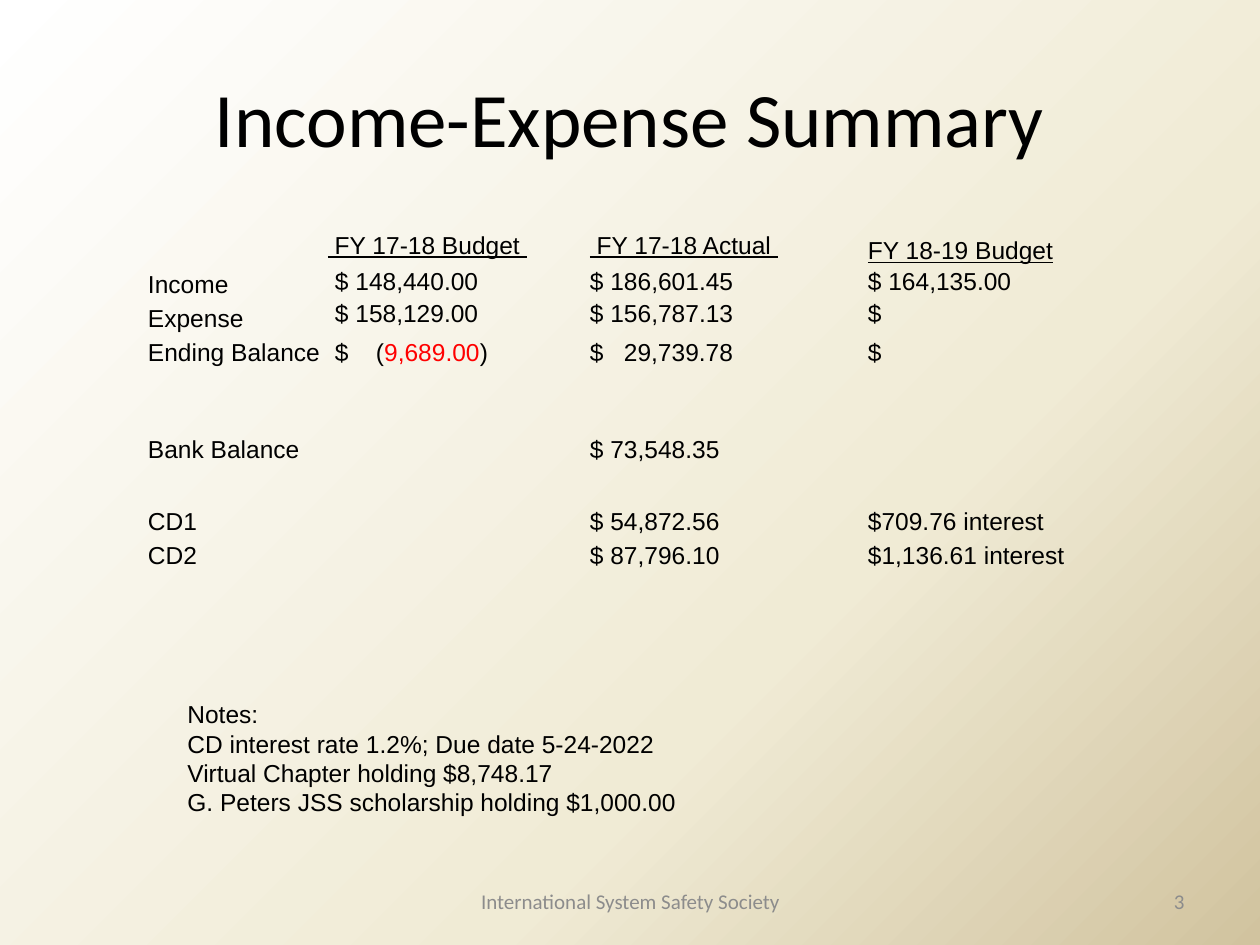
from dataclasses import dataclass
from typing import NamedTuple

from lxml.etree import SubElement
from pptx import Presentation
from pptx.dml.color import RGBColor
from pptx.enum.text import MSO_ANCHOR, PP_ALIGN
from pptx.oxml.ns import qn
from pptx.util import Pt

SCALE = 914400 / 126
BLACK, RED, GREY = "000000", "FF0000", "8C8C8C"
TOP, MID, LOW = MSO_ANCHOR.TOP, MSO_ANCHOR.MIDDLE, MSO_ANCHOR.BOTTOM
PLAIN = "{2D5ABB26-0587-4C30-8999-92F81FD0307C}"  # no style, no grid


class Run(NamedTuple):
    text: str
    color: str = BLACK
    line: bool = False


@dataclass
class Cell:
    row: int
    col: int
    runs: list[Run]
    anchor: MSO_ANCHOR = TOP
    inset: int = 1
    tab: int = 0


@dataclass
class Box:
    rect: tuple[int, int, int, int]
    lines: list[Run]
    size: int
    face: str
    align: PP_ALIGN = PP_ALIGN.LEFT
    anchor: MSO_ANCHOR = MID
    wrap: bool = True


def px(n: float) -> int:
    return round(n * SCALE)


def rgb(code: str) -> RGBColor:
    return RGBColor.from_string(code)


def add_run(para, item: Run, size: int, face: str) -> None:
    run = para.add_run()
    run.text = item.text
    font = run.font
    font.size, font.name, font.underline = Pt(size), face, item.line
    font.color.rgb = rgb(item.color)


def paint_back(slide, stops: list[tuple[int, str]]) -> None:
    fill = slide.background.fill
    fill.gradient()
    grad = slide.background._cSld.find(".//" + qn("a:gradFill"))
    stop_list = grad.find(qn("a:gsLst"))
    for old in list(stop_list):
        stop_list.remove(old)
    for pos, code in stops:
        stop = SubElement(stop_list, qn("a:gs"), pos=str(pos * 1000))
        SubElement(stop, qn("a:srgbClr"), val=code)
    fill.gradient_angle = 315


def add_box(slide, box: Box) -> None:
    frame = slide.shapes.add_textbox(*map(px, box.rect)).text_frame
    frame.word_wrap, frame.vertical_anchor = box.wrap, box.anchor
    for i, item in enumerate(box.lines):
        para = frame.add_paragraph() if i else frame.paragraphs[0]
        para.alignment = box.align
        add_run(para, item, box.size, box.face)


def fill_cell(table, item: Cell) -> None:
    cell = table.cell(item.row, item.col)
    cell.vertical_anchor, cell.margin_left = item.anchor, px(item.inset)
    para = cell.text_frame.paragraphs[0]
    if item.tab:
        tabs = SubElement(para._p.get_or_add_pPr(), qn("a:tabLst"))
        SubElement(tabs, qn("a:tab"), pos=str(px(item.tab)), algn="l")
    for run in item.runs:
        add_run(para, run, 14, "Arial")


def add_grid(slide, left: int, top: int, cols: list[int],
             rows: list[int], cells: list[Cell]) -> None:
    shape = slide.shapes.add_table(len(rows), len(cols), px(left), px(top),
                                   px(sum(cols)), px(sum(rows)))
    table = shape.table
    table.first_row = table.horz_banding = False
    table._tbl.tblPr.find(qn("a:tableStyleId")).text = PLAIN
    for col, width in zip(table.columns, cols):
        col.width = px(width)
    for row, height in zip(table.rows, rows):
        row.height = px(height)
    for cell in table.iter_cells():
        cell.fill.background()
        cell.margin_left = cell.margin_right = cell.margin_top = px(1)
        cell.margin_bottom = 0
    for item in cells:
        fill_cell(table, item)
    # Empty cells keep the small text height
    for cell in table.iter_cells():
        if not cell.text:
            para = cell.text_frame.paragraphs[0]._p
            SubElement(para, qn("a:endParaRPr"), sz="1400")


def words(row: int, texts: dict[int, str], anchor: MSO_ANCHOR) -> list[Cell]:
    return [Cell(row, col, [Run(text)], anchor, 8 if col == 1 else 1)
            for col, text in texts.items()]


COLS = [180, 262, 278, 237]
ROWS = [34] * 6 + [67] + [34] * 3
CELLS = [
    # Heads
    Cell(0, 1, [Run(" FY 17-18 Budget ", line=True)]),
    Cell(0, 2, [Run(" FY 17-18 Actual ", line=True)]),
    Cell(0, 3, [Run("FY 18-19 Budget", line=True)], LOW),
    # Income, expense and balance
    *words(1, {0: "Income"}, LOW),
    *words(1, {1: "$ 148,440.00", 2: "$ 186,601.45", 3: "$ 164,135.00"}, MID),
    *words(2, {0: "Expense"}, LOW),
    *words(2, {1: "$ 158,129.00", 2: "$ 156,787.13", 3: "$"}, TOP),
    *words(3, {0: "Ending Balance", 3: "$"}, LOW),
    Cell(3, 1, [Run("$\t("), Run("9,689.00", RED), Run(")")], LOW, 8, 41),
    Cell(3, 2, [Run("$\t29,739.78")], LOW, 1, 34),
    # Bank and deposits
    *words(6, {0: "Bank Balance", 2: "$ 73,548.35"}, TOP),
    *words(7, {0: "CD1", 2: "$ 54,872.56", 3: "$709.76 interest"}, LOW),
    *words(8, {0: "CD2", 2: "$ 87,796.10", 3: "$1,136.61 interest"}, LOW),
]
NOTES = [
    "Notes:",
    "CD interest rate 1.2%; Due date 5-24-2022",
    "Virtual Chapter holding $8,748.17",
    "G. Peters JSS scholarship holding $1,000.00",
]
BOXES = [
    # Title
    Box((63, 38, 1134, 158), [Run("Income-Expense Summary")], 44, "Calibri",
        PP_ALIGN.CENTER),
    # Footer and page number
    Box((431, 876, 399, 50), [Run("International System Safety Society", GREY)],
        12, "Calibri", PP_ALIGN.CENTER),
    Box((903, 876, 294, 50), [Run("3", GREY)], 12, "Calibri", PP_ALIGN.RIGHT),
    # Notes
    Box((175, 693, 517, 131), [Run(text) for text in NOTES], 14, "Arial",
        anchor=TOP, wrap=False),
]


def main() -> None:
    deck = Presentation()
    deck.slide_width, deck.slide_height = px(1260), px(945)
    slide = deck.slides.add_slide(deck.slide_layouts[6])
    paint_back(slide, [(0, "FFFFFF"), (65, "F0EBD5"), (100, "D1C39F")])
    for box in BOXES:
        add_box(slide, box)
    add_grid(slide, 147, 231, COLS, ROWS, CELLS)
    deck.save("out.pptx")


if __name__ == "__main__":
    main()
